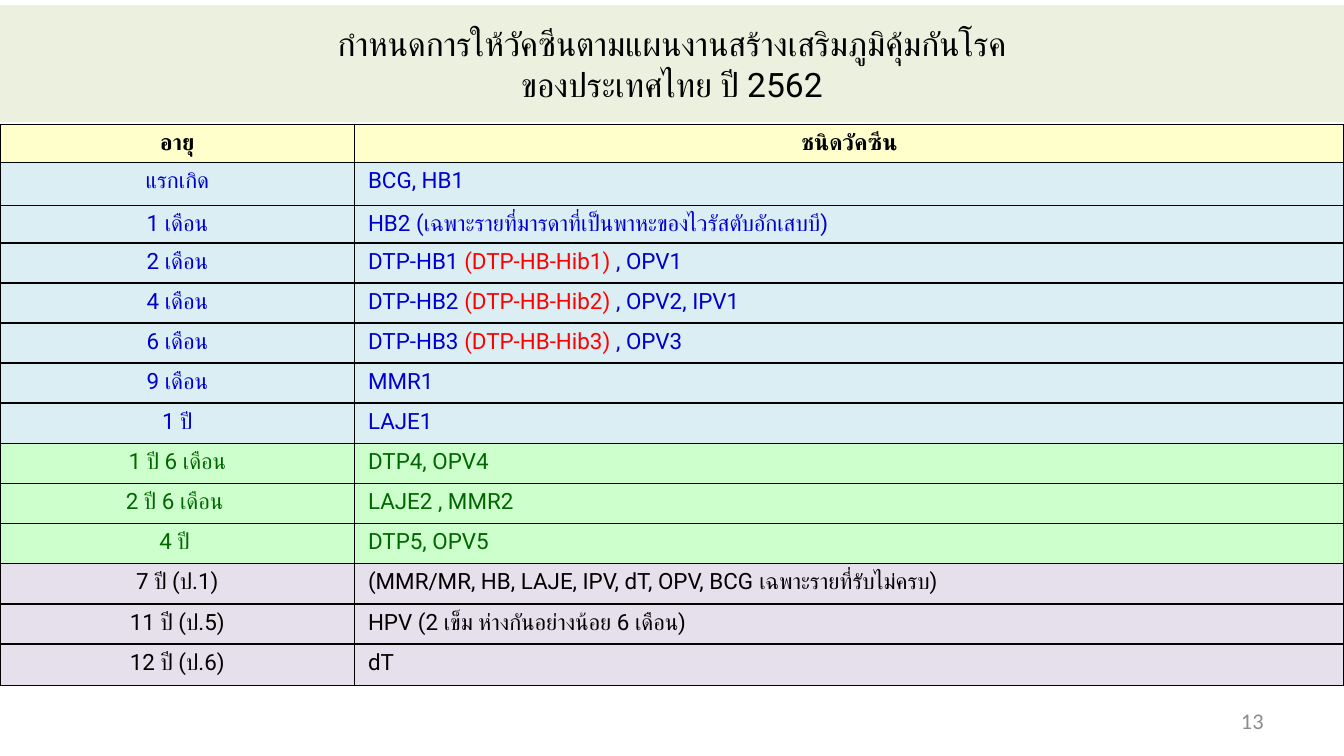
"""Build a slide with Thailand's 2562 childhood vaccination schedule."""
from dataclasses import dataclass

import lxml.etree
import pptx
import pptx.dml.color
import pptx.enum.shapes
import pptx.enum.text
import pptx.oxml.ns
import pptx.util

Pt = pptx.util.Pt
Align = pptx.enum.text.PP_ALIGN
Anchor = pptx.enum.text.MSO_ANCHOR


@dataclass(frozen=True)
class Theme:
    font: str = "Roboto"
    number_font: str = "Calibri"
    title_size: float = 18
    body_size: float = 12
    ink: str = "000000"
    highlight: str = "FF0000"
    number_color: str = "8C8C8C"
    title_fill: str = "EBF1DE"
    border_width: float = 1


@dataclass(frozen=True)
class Band:
    fill: str
    color: str
    bold: bool = False


@dataclass(frozen=True)
class Row:
    age: str
    vaccines: tuple[str, ...]
    band: Band
    height: float = 21.5


THEME = Theme()
HEADER = Band("FFFFCC", THEME.ink, bold=True)
INFANT = Band("DBEEF4", "0000CC")
TODDLER = Band("CCFFCC", "006600")
SCHOOL = Band("E6E0EC", THEME.ink)

SLIDE_WIDTH, SLIDE_HEIGHT = 720, 405
TABLE_TOP = 66.7
COLUMN_WIDTHS = (190, 530)
TITLE = ("กำหนดการให้วัคซีนตามแผนงานสร้างเสริมภูมิคุ้มกันโรค", "ของประเทศไทย ปี 2562")
ROWS = (
    Row("อายุ", ("ชนิดวัคซีน",), HEADER, 20.3),
    Row("แรกเกิด", ("BCG, HB1",), INFANT, 23),
    Row("1 เดือน", ("HB2 (เฉพาะรายที่มารดาที่เป็นพาหะของไวรัสตับอักเสบบี)",), INFANT, 20.1),
    Row("2 เดือน", ("DTP-HB1 ", "(DTP-HB-Hib1) ", ", OPV1"), INFANT),
    Row("4 เดือน", ("DTP-HB2 ", "(DTP-HB-Hib2) ", ", OPV2, IPV1"), INFANT),
    Row("6 เดือน", ("DTP-HB3 ", "(DTP-HB-Hib3) ", ", OPV3"), INFANT),
    Row("9 เดือน", ("MMR1",), INFANT),
    Row("1 ปี", ("LAJE1",), INFANT),
    Row("1 ปี 6 เดือน", ("DTP4, OPV4",), TODDLER),
    Row("2 ปี 6 เดือน ", ("LAJE2 , MMR2",), TODDLER),
    Row("4 ปี ", ("DTP5, OPV5",), TODDLER),
    Row("7 ปี (ป.1)", ("(MMR/MR, HB, LAJE, IPV, dT, OPV, BCG เฉพาะรายที่รับไม่ครบ)",), SCHOOL),
    Row("11 ปี (ป.5)", ("HPV (2 เข็ม ห่างกันอย่างน้อย 6 เดือน)",), SCHOOL),
    Row("12 ปี (ป.6)", ("dT",), SCHOOL, 22.4),
)


def rgb(value: str) -> pptx.dml.color.RGBColor:
    """Turn a hexadecimal string into a colour."""
    return pptx.dml.color.RGBColor.from_string(value)


def add_text(paragraph, text: str, *, size: float = THEME.body_size, color: str = THEME.ink,
             font: str = THEME.font, bold: bool = False, align=Align.LEFT) -> None:
    """Append a formatted run, with the same typeface for Thai letters."""
    paragraph.alignment = align
    run = paragraph.add_run()
    run.text = text
    run.font.size = Pt(size)
    run.font.bold = bold
    run.font.color.rgb = rgb(color)
    run.font.name = font
    properties = run.font._element
    lxml.etree.SubElement(properties, pptx.oxml.ns.qn("a:cs"), typeface=font)


def format_cell(cell, fill: str) -> None:
    """Give a cell its margins, black borders and fill."""
    cell.margin_left = cell.margin_right = Pt(7.2)
    cell.margin_top = cell.margin_bottom = Pt(2.9)
    cell.vertical_anchor = Anchor.TOP
    properties = cell._tc.get_or_add_tcPr()
    for side in ("lnL", "lnR", "lnT", "lnB"):
        line = lxml.etree.SubElement(properties, pptx.oxml.ns.qn(f"a:{side}"),
                                     w=str(Pt(THEME.border_width)))
        solid = lxml.etree.SubElement(line, pptx.oxml.ns.qn("a:solidFill"))
        lxml.etree.SubElement(solid, pptx.oxml.ns.qn("a:srgbClr"), val=THEME.ink)
    cell.fill.solid()
    cell.fill.fore_color.rgb = rgb(fill)


def add_schedule(slide, rows: tuple[Row, ...]) -> None:
    """Draw the table of ages and vaccines."""
    height = sum(row.height for row in rows)
    table = slide.shapes.add_table(len(rows), len(COLUMN_WIDTHS), Pt(0), Pt(TABLE_TOP),
                                   Pt(SLIDE_WIDTH), Pt(height)).table
    table.first_row = table.horz_banding = False
    for column, width in zip(table.columns, COLUMN_WIDTHS):
        column.width = Pt(width)
    for index, row in enumerate(rows):
        table.rows[index].height = Pt(row.height)
        age_cell, vaccine_cell = table.rows[index].cells
        for cell in (age_cell, vaccine_cell):
            format_cell(cell, row.band.fill)
        add_text(age_cell.text_frame.paragraphs[0], row.age, color=row.band.color,
                 bold=row.band.bold, align=Align.CENTER)
        align = Align.CENTER if row.band is HEADER else Align.LEFT
        for position, part in enumerate(row.vaccines):
            color = THEME.highlight if position == 1 else row.band.color
            add_text(vaccine_cell.text_frame.paragraphs[0], part, color=color,
                     bold=row.band.bold, align=align)


def add_title(slide, lines: tuple[str, ...]) -> None:
    """Draw the title band across the slide."""
    shape = slide.shapes.add_shape(pptx.enum.shapes.MSO_SHAPE.RECTANGLE,
                                   Pt(0), Pt(2.7), Pt(SLIDE_WIDTH), Pt(62.8))
    shape.shadow.inherit = False
    shape.fill.solid()
    shape.fill.fore_color.rgb = rgb(THEME.title_fill)
    shape.line.fill.background()
    frame = shape.text_frame
    frame.word_wrap = True
    frame.vertical_anchor = Anchor.MIDDLE
    for index, line in enumerate(lines):
        paragraph = frame.add_paragraph() if index else frame.paragraphs[0]
        add_text(paragraph, line, size=THEME.title_size, align=Align.CENTER)


def add_slide_number(slide, number: str) -> None:
    """Draw the slide number at the lower right."""
    frame = slide.shapes.add_textbox(Pt(516), Pt(375.4), Pt(168), Pt(21.6)).text_frame
    frame.word_wrap = True
    frame.vertical_anchor = Anchor.MIDDLE
    add_text(frame.paragraphs[0], number, color=THEME.number_color,
             font=THEME.number_font, align=Align.RIGHT)


def main() -> None:
    """Build and save the presentation."""
    presentation = pptx.Presentation()
    presentation.slide_width = Pt(SLIDE_WIDTH)
    presentation.slide_height = Pt(SLIDE_HEIGHT)
    slide = presentation.slides.add_slide(presentation.slide_layouts[6])
    add_schedule(slide, ROWS)
    add_title(slide, TITLE)
    add_slide_number(slide, "13")
    presentation.save("out.pptx")


if __name__ == "__main__":
    main()
